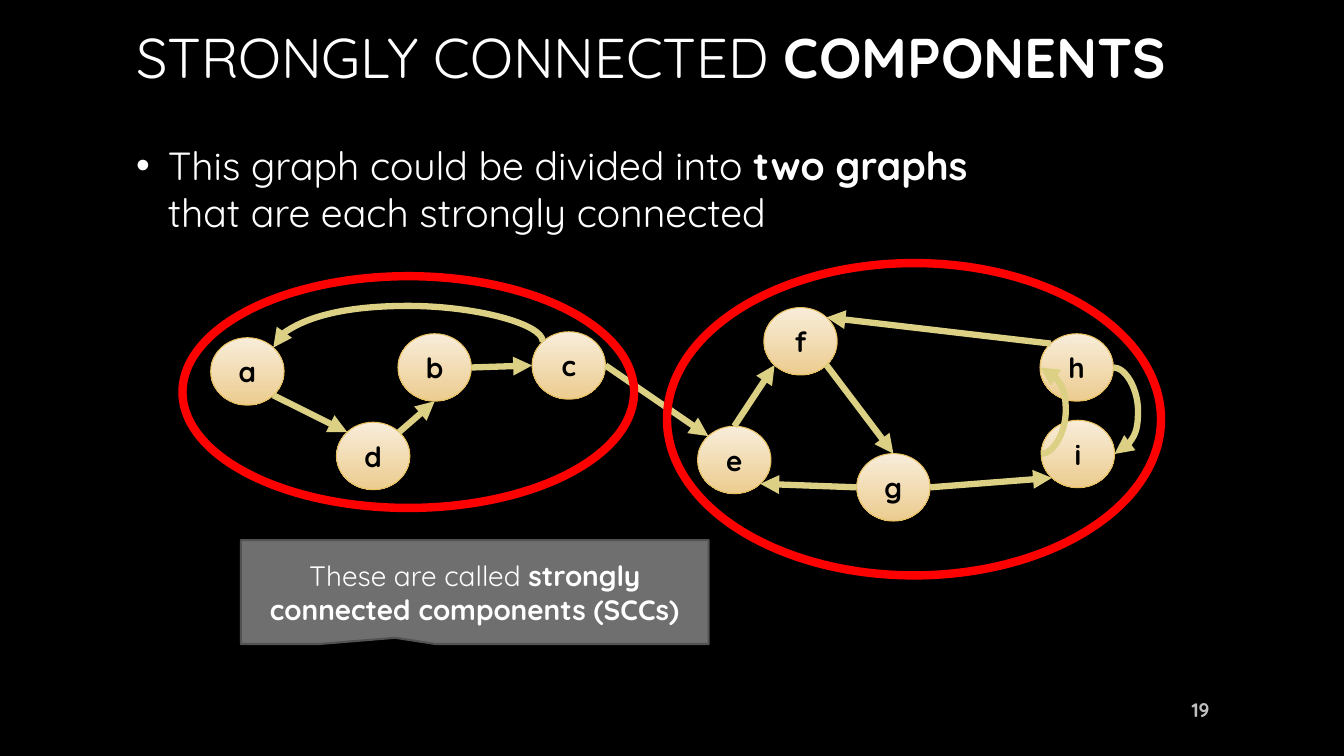
from dataclasses import dataclass
from math import sqrt

from pptx import Presentation
from pptx import util as u
from pptx.dml.color import RGBColor
from pptx.enum import shapes, text
from pptx.oxml import parse_xml
from pptx.oxml.ns import nsdecls, qn


@dataclass(frozen=True)
class Theme:
    font: str = "Quicksand"
    background: str = "000000"
    light: str = "FFFFFF"
    dark: str = "000000"
    muted: str = "BFBFBF"
    node_top: str = "F8EDDA"
    node_bottom: str = "ECCC8F"
    node_line: str = "E7BF5F"
    edge: str = "DCD084"
    ring: str = "FF0000"
    callout: str = "6F6F6F"
    callout_line: str = "525252"
    title_size: int = 40
    body_size: int = 28
    label_size: int = 20
    number_size: int = 14


@dataclass(frozen=True)
class Box:
    """A rectangle in centimetres."""
    left: float
    top: float
    width: float
    height: float

    def inner(self, left, top, width, height):
        return Box(self.left + left, self.top + top, width, height)

    def lengths(self):
        return [u.Cm(v) for v in (self.left, self.top, self.width, self.height)]

    def site(self, across, down):
        """Point on the inscribed ellipse in a direction of -1, 0 or 1 each way."""
        reach = sqrt(across ** 2 + down ** 2)
        return (self.left + self.width / 2 * (1 + across / reach),
                self.top + self.height / 2 * (1 + down / reach))


THEME = Theme()
TOP, BOTTOM, LEFT, RIGHT = (0, -1), (0, 1), (-1, 0), (1, 0)
TOP_LEFT, TOP_RIGHT, BOTTOM_LEFT, BOTTOM_RIGHT = (-1, -1), (1, -1), (-1, 1), (1, 1)

NODE_SIZE = (1.85, 1.7)
NODES = {"a": (0.71, 1.91), "b": (5.43, 1.81), "c": (8.81, 1.76),
         "d": (3.88, 4.04), "e": (12.98, 4.14), "f": (14.65, 1.15),
         "g": (16.99, 4.83), "h": (21.61, 1.81), "i": (21.64, 3.99)}
EDGES = [("b", RIGHT, "c", LEFT), ("d", TOP_RIGHT, "b", BOTTOM),
         ("a", BOTTOM_RIGHT, "d", TOP_LEFT), ("f", BOTTOM_RIGHT, "g", TOP),
         ("g", LEFT, "e", BOTTOM_RIGHT), ("e", TOP, "f", BOTTOM_LEFT),
         ("c", RIGHT, "e", TOP_LEFT), ("g", RIGHT, "i", BOTTOM_LEFT),
         ("h", TOP_LEFT, "f", TOP_RIGHT)]
SIDE_BULGE, TOP_BULGE = 0.62, 0.9
RINGS = [(0, 0.36, 11.38, 5.84), (12.21, 0.03, 12.45, 7.87)]


def color(value):
    return RGBColor.from_string(value)


def write(para, *parts, size, tint, align=text.PP_ALIGN.LEFT):
    """Fill a paragraph with (words, bold) parts; a part of None breaks the line."""
    para.alignment = align
    for part in parts:
        if part is None:
            para.add_line_break()
            continue
        span = para.add_run()
        span.text, span.font.bold = part
        span.font.name = THEME.font
        span.font.size = u.Pt(size)
        span.font.color.rgb = color(tint)


def add_outline(page, kind, box, line, weight):
    shape = page.shapes.add_shape(kind, *box.lengths())
    shape.shadow.inherit = False
    shape.fill.background()
    shape.line.color.rgb = color(line)
    shape.line.width = u.Pt(weight)
    shape.text_frame.vertical_anchor = text.MSO_ANCHOR.MIDDLE
    return shape


def add_arrow(page, kind, start, end):
    arrow = page.shapes.add_connector(kind, *[u.Cm(v) for v in (*start, *end)])
    arrow.line.color.rgb = color(THEME.edge)
    arrow.line.width = u.Pt(4.5)
    arrow.line._get_or_add_ln().append(
        parse_xml(f'<a:tailEnd {nsdecls("a")} type="triangle"/>'))
    arrow._element.spPr.append(parse_xml(f'<a:effectLst {nsdecls("a")}/>'))
    return arrow


def add_arc(page, start, end, bulge, upright=False):
    """Curved arrow leaving and arriving on one side; upright bulges upwards."""
    if upright:
        middle_x, middle_y = (start[0] + end[0]) / 2, (start[1] + end[1]) / 2
        start, end = [(middle_x - (y - middle_y), middle_y + (x - middle_x))
                      for x, y in (start, end)]
    arrow = add_arrow(page, shapes.MSO_CONNECTOR.CURVE, start, end)
    properties = arrow._element.spPr
    if upright:
        properties.find(qn("a:xfrm")).set("rot", str(270 * 60000))
    adjust = round(bulge / (end[0] - start[0]) * 100000)
    guides = properties.find(qn("a:prstGeom")).get_or_add_avLst()
    guides.append(parse_xml(
        f'<a:gd {nsdecls("a")} name="adj1" fmla="val {adjust}"/>'))


def add_node(page, box, label):
    node = add_outline(page, shapes.MSO_SHAPE.OVAL, box, THEME.node_line, 0.75)
    node.fill.gradient()
    node.fill.gradient_angle = 270
    for stop, tint in zip(node.fill.gradient_stops,
                          (THEME.node_top, THEME.node_bottom)):
        stop.color.rgb = color(tint)
    for stop, position in zip(node.fill.gradient_stops, (0, 1)):
        stop.position = position
    write(node.text_frame.paragraphs[0], (label, True), size=THEME.label_size,
          tint=THEME.dark, align=text.PP_ALIGN.CENTER)


def add_graph(page, box):
    places = {name: box.inner(*spot, *NODE_SIZE) for name, spot in NODES.items()}
    for name, place in places.items():
        add_node(page, place, name)
    for source, leaving, target, arriving in EDGES:
        add_arrow(page, shapes.MSO_CONNECTOR.STRAIGHT,
                  places[source].site(*leaving), places[target].site(*arriving))
    add_arc(page, places["c"].site(*TOP_LEFT), places["a"].site(*TOP_RIGHT),
            TOP_BULGE, upright=True)
    add_arc(page, places["h"].site(*RIGHT), places["i"].site(*RIGHT), SIDE_BULGE)
    add_arc(page, places["i"].site(*LEFT), places["h"].site(*LEFT), SIDE_BULGE)
    for ring in RINGS:
        add_outline(page, shapes.MSO_SHAPE.OVAL, box.inner(*ring), THEME.ring, 6)


def add_title(page, box):
    title = page.shapes.title
    title.left, title.top, title.width, title.height = box.lengths()
    title.text_frame.vertical_anchor = text.MSO_ANCHOR.MIDDLE
    write(title.text_frame.paragraphs[0], ("STRONGLY CONNECTED ", False),
          ("COMPONENTS", True), size=THEME.title_size, tint=THEME.light)


def add_statement(page, box):
    frame = page.shapes.add_textbox(*box.lengths()).text_frame
    frame.word_wrap = True
    para = frame.paragraphs[0]
    write(para, ("This graph could be divided into ", False), ("two graphs", True),
          None, ("that are each strongly connected", False),
          size=THEME.body_size, tint=THEME.light)
    para.space_before, para.space_after = u.Pt(5.6), u.Pt(6)
    settings = para._p.get_or_add_pPr()
    settings.set("marL", str(u.Cm(0.8)))
    settings.set("indent", str(-u.Cm(0.8)))
    settings.append(parse_xml(f'<a:buFont {nsdecls("a")} typeface="Arial"/>'))
    settings.append(parse_xml(f'<a:buChar {nsdecls("a")} char="•"/>'))


def add_callout(page, box):
    callout = add_outline(page, shapes.MSO_SHAPE.RECTANGULAR_CALLOUT, box,
                          THEME.callout_line, 1.5)
    callout.fill.solid()
    callout.fill.fore_color.rgb = color(THEME.callout)
    callout.adjustments[0], callout.adjustments[1] = -0.17, 0.44
    callout.text_frame.word_wrap = True
    write(callout.text_frame.paragraphs[0], ("These are called ", False),
          ("strongly connected components (SCCs)", True),
          size=THEME.label_size, tint=THEME.light, align=text.PP_ALIGN.CENTER)


def add_page_number(page, box):
    frame = page.shapes.add_textbox(*box.lengths()).text_frame
    frame.word_wrap = True
    frame.vertical_anchor = text.MSO_ANCHOR.MIDDLE
    write(frame.paragraphs[0], ("19", True), size=THEME.number_size,
          tint=THEME.muted, align=text.PP_ALIGN.RIGHT)


def main():
    deck = Presentation()
    deck.slide_width, deck.slide_height = u.Cm(33.87), u.Cm(19.05)
    page = deck.slides.add_slide(deck.slide_layouts[5])
    page.background.fill.solid()
    page.background.fill.fore_color.rgb = color(THEME.background)
    add_title(page, Box(3.18, 0, 27.51, 2.84))
    add_statement(page, Box(3.18, 3.43, 27.51, 2.8))
    add_graph(page, Box(4.6, 6.6, 24.66, 7.9))
    add_callout(page, Box(6.07, 13.61, 11.79, 2.62))
    add_page_number(page, Box(29.21, 17.37, 1.52, 1.02))
    deck.save("out.pptx")


if __name__ == "__main__":
    main()
